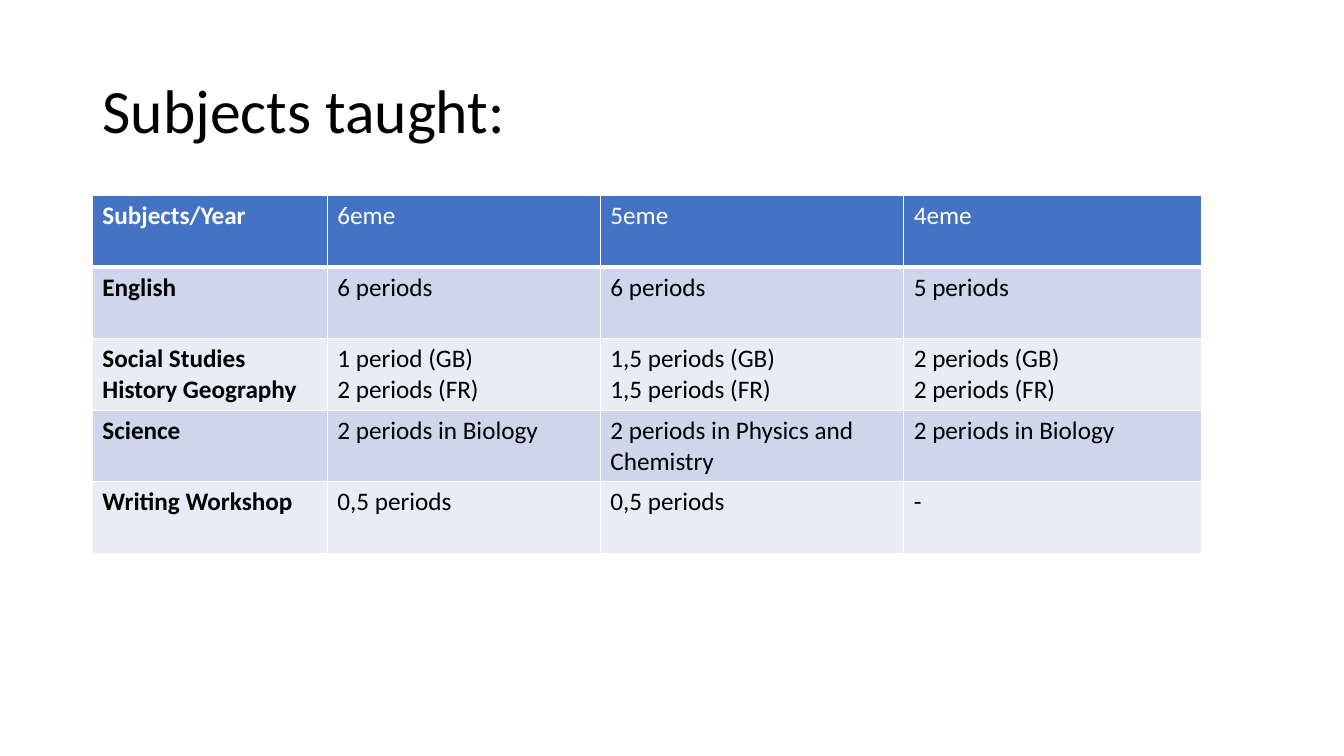
from dataclasses import dataclass

from lxml import etree
from pptx import Presentation
from pptx.dml.color import RGBColor
from pptx.enum import text
from pptx.oxml import ns
from pptx.table import _Cell
from pptx.text.text import TextFrame
from pptx.util import Pt


@dataclass(frozen=True)
class Theme:
    font: str = "Calibri"
    title_size: float = 44
    table_size: float = 18
    ink: str = "000000"
    white: str = "FFFFFF"
    header: str = "4472C4"
    bands: tuple[str, str] = ("CFD5EA", "E9EBF5")
    rule: float = 1
    header_rule: float = 3


@dataclass(frozen=True)
class SubjectRow:
    subject: str
    periods: tuple[str, str, str]


THEME = Theme()
LEFT = 66
TABLE_TOP = 139.7
ROW_HEIGHT = 51.1
COLUMN_WIDTHS = (167.8, 195.1, 216.7, 212.4)
TIMETABLE = (
    SubjectRow("Subjects/Year", ("6eme", "5eme", "4eme")),
    SubjectRow("English", ("6 periods", "6 periods", "5 periods")),
    SubjectRow("Social Studies\nHistory Geography",
               ("1 period (GB)\n2 periods (FR)",
                "1,5 periods (GB)\n1,5 periods (FR)",
                "2 periods (GB)\n2 periods (FR)")),
    SubjectRow("Science",
               ("2 periods in Biology",
                "2 periods in Physics and Chemistry",
                "2 periods in Biology")),
    SubjectRow("Writing Workshop", ("0,5 periods", "0,5 periods", "-")),
)


def write(frame: TextFrame, words: str, size: float, color: str, bold: bool) -> None:
    frame.text = words
    for paragraph in frame.paragraphs:
        for run in paragraph.runs:
            run.font.name = THEME.font
            run.font.size = Pt(size)
            run.font.bold = bold
            run.font.color.rgb = RGBColor.from_string(color)


def add_border(cell: _Cell, side: str, width: float) -> None:
    properties = cell._tc.get_or_add_tcPr()
    line = etree.SubElement(properties, ns.qn(f"a:ln{side}"), w=str(Pt(width)))
    fill = etree.SubElement(line, ns.qn("a:solidFill"))
    etree.SubElement(fill, ns.qn("a:srgbClr"), val=THEME.white)


def style_cell(cell: _Cell, words: str, row: int, column: int) -> None:
    is_header = row == 0
    # Borders come before the fill in the cell properties
    widths = {"L": THEME.rule, "R": THEME.rule,
              "T": THEME.header_rule if row == 1 else THEME.rule,
              "B": THEME.header_rule if is_header else THEME.rule}
    for side, width in widths.items():
        add_border(cell, side, width)
    cell.fill.solid()
    band = THEME.header if is_header else THEME.bands[(row - 1) % 2]
    cell.fill.fore_color.rgb = RGBColor.from_string(band)
    write(cell.text_frame, words, THEME.table_size,
          THEME.white if is_header else THEME.ink, bold=column == 0)


def main() -> None:
    deck = Presentation()
    deck.slide_width, deck.slide_height = Pt(960), Pt(540)
    slide = deck.slides.add_slide(deck.slide_layouts[5])

    # Title
    heading = slide.shapes.title
    heading.left, heading.top = Pt(LEFT), Pt(28.8)
    heading.width, heading.height = Pt(828), Pt(104.4)
    write(heading.text_frame, "Subjects taught:", THEME.title_size, THEME.ink, bold=False)
    heading.text_frame.vertical_anchor = text.MSO_ANCHOR.MIDDLE
    heading.text_frame.paragraphs[0].alignment = text.PP_ALIGN.LEFT
    heading.text_frame.paragraphs[0].line_spacing = 0.9

    # Timetable
    timetable = slide.shapes.add_table(
        len(TIMETABLE), len(COLUMN_WIDTHS), Pt(LEFT), Pt(TABLE_TOP),
        Pt(sum(COLUMN_WIDTHS)), Pt(ROW_HEIGHT * len(TIMETABLE))).table
    for column, width in zip(timetable.columns, COLUMN_WIDTHS):
        column.width = Pt(width)
    for row, entry in enumerate(TIMETABLE):
        timetable.rows[row].height = Pt(ROW_HEIGHT)
        for column, words in enumerate((entry.subject, *entry.periods)):
            style_cell(timetable.cell(row, column), words, row, column)

    deck.save("out.pptx")


if __name__ == "__main__":
    main()
